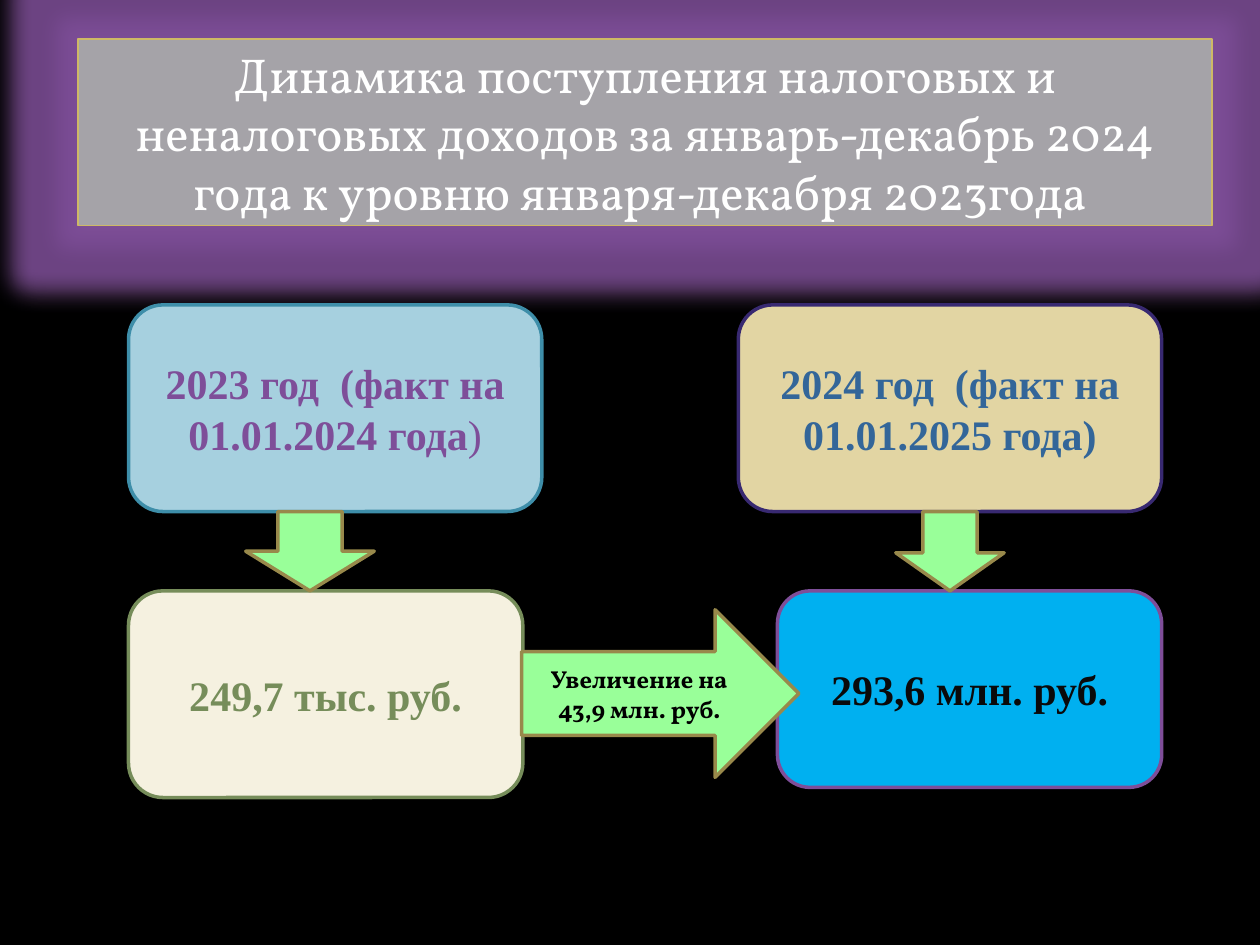
import lxml.etree
import pptx
import pptx.dml.color
import pptx.enum.shapes
import pptx.enum.text
import pptx.oxml.ns
import pptx.util

SHAPES = pptx.enum.shapes.MSO_SHAPE
WIDTH = pptx.util.Inches(10)
HEIGHT = pptx.util.Inches(7.5)
SERIF = "Times New Roman"
DISPLAY = "Vollkorn"

COLORS = {
    "background": "000000",
    "title_fill": "A5A3A8", "title_line": "CEB966", "title_text": "FFFFFF",
    "shadow": "FFFF00", "purple": "7E4E99", "green": "768D5A",
    "sky": "A6D0DF", "teal": "3E8EA9",
    "sand": "E2D5A3", "indigo": "382971", "blue": "336699",
    "cream": "F5F1E0", "azure": "00B0F0", "ink": "0A0A0B",
    "arrow_fill": "99FF99", "arrow_line": "98894B", "arrow_text": "000000",
}

# Shares of the slide's height, in percent
UPPER_ROW = 32.27
BOX_HEIGHT = 21.87
LOWER_ROW = 62.53
ARROW_ROW = UPPER_ROW + BOX_HEIGHT
ARROW_HEIGHT = LOWER_ROW - ARROW_ROW
# Shares of the slide's width, in percent
LEFT_EDGE = 10.2
RIGHT_EDGE = 92.2


def color(name):
    return pptx.dml.color.RGBColor.from_string(COLORS[name])


def add_block(page, kind, area, fill, line, line_width=2):
    """Add a filled shape; area is left, top, width, height in percent of the slide."""
    left, top, width, height = area
    block = page.shapes.add_shape(
        kind, int(WIDTH * left / 100), int(HEIGHT * top / 100),
        int(WIDTH * width / 100), int(HEIGHT * height / 100))
    block.shadow.inherit = False
    block.fill.solid()
    block.fill.fore_color.rgb = color(fill)
    block.line.color.rgb = color(line)
    block.line.width = pptx.util.Pt(line_width)
    return block


def write(block, text, size, font, text_color, bold=True, plain_end=""):
    """Centre text in a block; plain_end follows it without bold."""
    frame = block.text_frame
    frame.word_wrap = True
    frame.vertical_anchor = pptx.enum.text.MSO_ANCHOR.MIDDLE
    para = frame.paragraphs[0]
    para.text = text
    para.alignment = pptx.enum.text.PP_ALIGN.CENTER
    para.runs[0].font.bold = bold
    if plain_end:
        span = para.add_run()
        span.text = plain_end
        span.font.bold = False
    for span in para.runs:
        span.font.size = pptx.util.Pt(size)
        span.font.name = font
        span.font.color.rgb = color(text_color)


def add_effect(effects, kind, color_name, alpha, **settings):
    effect = lxml.etree.SubElement(effects, pptx.oxml.ns.qn(f"a:{kind}"))
    for key, value in settings.items():
        effect.set(key, str(int(value)))
    tint = lxml.etree.SubElement(effect, pptx.oxml.ns.qn("a:srgbClr"), val=COLORS[color_name])
    lxml.etree.SubElement(tint, pptx.oxml.ns.qn("a:alpha"), val=str(alpha * 1000))


def add_title(page, text):
    title = add_block(page, SHAPES.RECTANGLE, (6.2, 4.13, 90, 19.73),
                      "title_fill", "title_line", 0.75)
    write(title, text, 28, DISPLAY, "title_text", bold=False)
    effects = title.element.spPr.find(pptx.oxml.ns.qn("a:effectLst"))
    add_effect(effects, "glow", "purple", 85, rad=pptx.util.Inches(0.36))
    add_effect(effects, "outerShdw", "shadow", 40, blurRad=pptx.util.Pt(4),
               dist=pptx.util.Pt(3), dir=45 * 60000)


def add_box(page, area, fill, line, text, text_color, plain_end=""):
    box = add_block(page, SHAPES.ROUNDED_RECTANGLE, area, fill, line)
    write(box, text, 24, SERIF, text_color, plain_end=plain_end)


def add_arrow(page, kind, area, head=0.5, text=""):
    arrow = add_block(page, kind, area, "arrow_fill", "arrow_line")
    arrow.adjustments[1] = head
    if text:
        write(arrow, text, 14, DISPLAY, "arrow_text")


def main():
    deck = pptx.Presentation()
    deck.slide_width = WIDTH
    deck.slide_height = HEIGHT
    page = deck.slides.add_slide(deck.slide_layouts[6])
    page.background.fill.solid()
    page.background.fill.fore_color.rgb = color("background")

    add_title(page, "Динамика поступления налоговых и неналоговых доходов за "
                    "январь-декабрь 2024 года к уровню января-декабря 2023года ")

    add_box(page, (LEFT_EDGE, UPPER_ROW, 32.8, BOX_HEIGHT), "sky", "teal",
            "2023 год  (факт на 01.01.2024 года", "purple", plain_end=")")
    add_box(page, (RIGHT_EDGE - 33.6, UPPER_ROW, 33.6, BOX_HEIGHT), "sand", "indigo",
            "2024 год  (факт на 01.01.2025 года)", "blue")
    add_box(page, (LEFT_EDGE, LOWER_ROW, 31.3, BOX_HEIGHT), "cream", "green",
            "249,7 тыс. руб.", "green")
    add_box(page, (RIGHT_EDGE - 30.5, LOWER_ROW, 30.5, 20.8), "azure", "purple",
            "293,6 млн. руб.", "ink")

    add_arrow(page, SHAPES.DOWN_ARROW, (19.5, ARROW_ROW, 10.2, ARROW_HEIGHT))
    add_arrow(page, SHAPES.DOWN_ARROW, (71.1, ARROW_ROW, 8.6, ARROW_HEIGHT), head=0.48)
    add_arrow(page, SHAPES.RIGHT_ARROW, (41.4, 64.53, 22, 17.73),
              text="Увеличение на 43,9 млн. руб.")

    deck.save("out.pptx")


if __name__ == "__main__":
    main()
